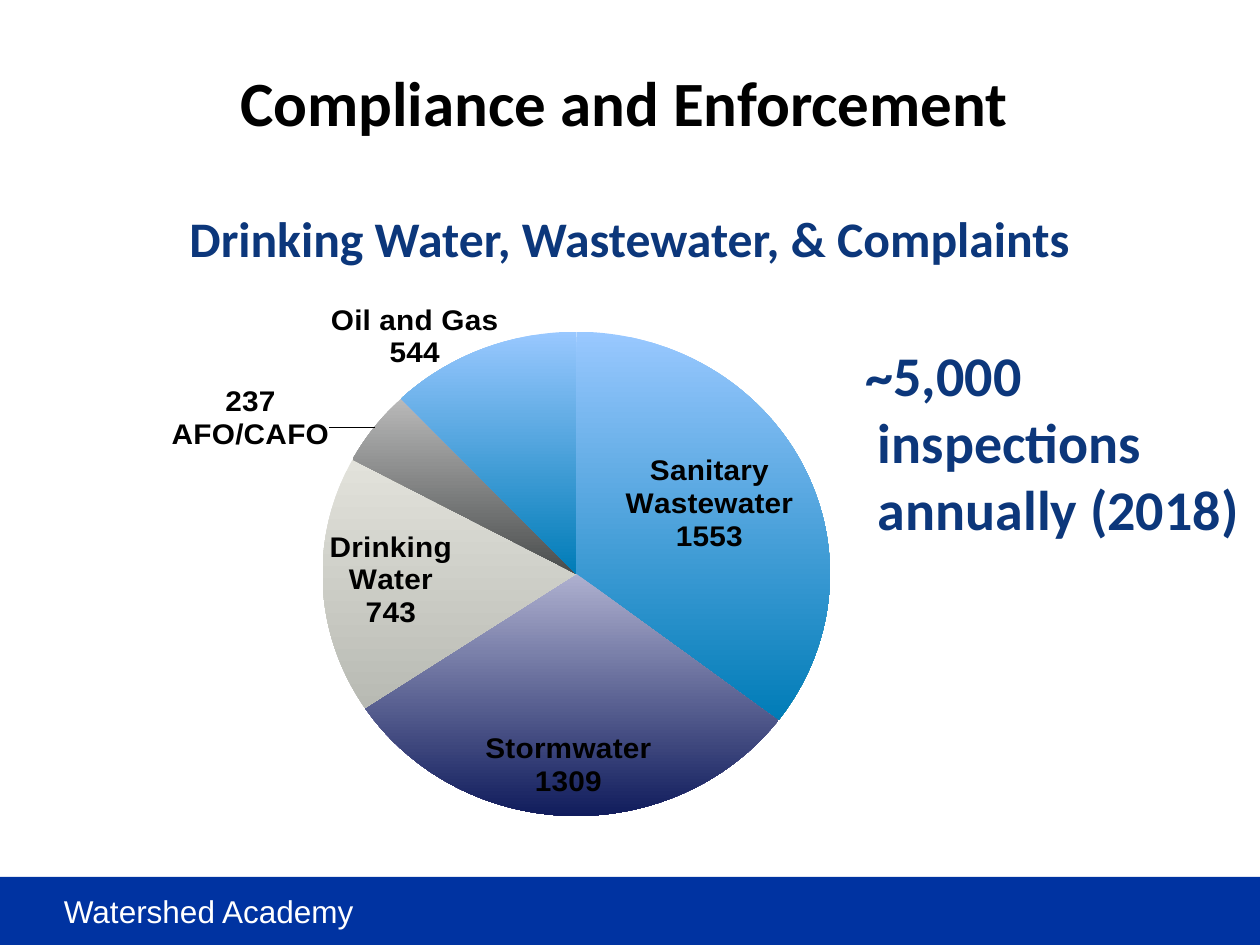
from dataclasses import dataclass

from pptx import Presentation
from pptx.chart.data import CategoryChartData
from pptx.dml.color import RGBColor
from pptx.enum.chart import XL_CHART_TYPE as ChartType, XL_LABEL_POSITION as Position
from pptx.enum.shapes import MSO_SHAPE as Preset
from pptx.enum.text import MSO_ANCHOR as Anchor, PP_ALIGN as Align
from pptx.oxml import parse_xml
from pptx.oxml.ns import nsdecls
from pptx.util import Cm, Pt


@dataclass(frozen=True)
class Theme:
    heading_font: str = "Calibri"
    label_font: str = "Arial"
    black: str = "000000"
    white: str = "FFFFFF"
    navy: str = "0C377B"
    footer: str = "0033A1"
    title_size: float = 36
    callout_size: float = 32
    subtitle_size: float = 28.4
    footer_size: float = 18
    label_size: float = 17


THEME = Theme()

SLICES = [
    (35, "99C8FF", "007CB7", Position.CENTER, (0.02, -0.03),
     ["Sanitary", "Wastewater", "1553"]),
    (30, "AEB0CF", "101C5C", Position.INSIDE_END, (0, -0.02), ["Stormwater", "1309"]),
    (17, "E2E2DB", "B8BAB3", Position.CENTER, (-0.06, 0), ["Drinking", "Water", "743"]),
    (5, "B9B9B9", "4A4D4D", Position.OUTSIDE_END, (-0.04, 0.05), ["237", "AFO/CAFO"]),
    (12, "99C8FF", "007CB7", Position.OUTSIDE_END, (0.02, 0.04), ["Oil and Gas", "544"]),
]


def style_font(font, name, size, color, bold=False):
    font.name = name
    font.size = Pt(size)
    font.bold = bold
    font.color.rgb = RGBColor.from_string(color)


def style_frame(text_frame, name, size, color, bold=False, align=None):
    for paragraph in text_frame.paragraphs:
        if align is not None:
            paragraph.alignment = align
        for run in paragraph.runs:
            style_font(run.font, name, size, color, bold)


def add_text(slide, box, text, *style, **options):
    shape = slide.shapes.add_textbox(*map(Cm, box))
    text_frame = shape.text_frame
    text_frame.word_wrap = True
    text_frame.text = text
    style_frame(text_frame, *style, **options)
    return text_frame


def set_title(slide, text):
    title = slide.shapes.title
    title.left, title.top, title.width, title.height = map(Cm, (1.04, 0.76, 23.09, 2.57))
    title.text_frame.text = text
    title.text_frame.vertical_anchor = Anchor.MIDDLE
    style_frame(title.text_frame, THEME.heading_font, THEME.title_size, THEME.black,
                bold=True, align=Align.CENTER)


def add_footer(slide, text):
    bar = slide.shapes.add_shape(Preset.RECTANGLE, Cm(0), Cm(17.68), Cm(25.4), Cm(1.37))
    bar.shadow.inherit = False
    bar.fill.solid()
    bar.fill.fore_color.rgb = RGBColor.from_string(THEME.footer)
    bar.line.fill.background()
    add_text(slide, (1.04, 17.86, 8.53, 1.04), text,
             THEME.label_font, THEME.footer_size, THEME.white)


def add_callout(slide, lines):
    text_frame = add_text(slide, (16.45, 6.74, 9.3, 5.74), "\n".join(lines),
                          THEME.heading_font, THEME.callout_size, THEME.navy, bold=True)
    for paragraph in text_frame.paragraphs:
        properties = paragraph._p.get_or_add_pPr()
        properties.set("marL", str(Cm(1)))
        properties.set("indent", "0")
    text_frame.paragraphs[0]._p.get_or_add_pPr().set("marL", str(Cm(0.75)))


def make_layout(**values):
    children = "".join(f'<c:{tag} val="{value}"/>' for tag, value in values.items())
    return parse_xml(f'<c:layout {nsdecls("c")}><c:manualLayout>{children}'
                     '</c:manualLayout></c:layout>')


def set_plot_layout(chart, left, top, width, height):
    plot_area = chart._chartSpace.chart.plotArea
    for layout in plot_area.xpath("c:layout"):
        plot_area.remove(layout)
    plot_area.insert(0, make_layout(layoutTarget="inner", xMode="edge", yMode="edge",
                                    x=left, y=top, w=width, h=height))


def format_slice(point, top_color, bottom_color, position, offset, lines):
    fill = point.format.fill
    fill.gradient()
    fill.gradient_angle = 270
    for stop, color in zip(fill.gradient_stops, (top_color, bottom_color)):
        stop.color.rgb = RGBColor.from_string(color)
    point.format.line.fill.background()
    label = point.data_label
    label.text_frame.text = "\n".join(lines)
    style_frame(label.text_frame, THEME.label_font, THEME.label_size, THEME.black, bold=True)
    label.position = position
    label._get_or_add_dLbl().insert(1, make_layout(x=offset[0], y=offset[1]))


def add_inspection_pie(slide):
    data = CategoryChartData()
    data.categories = [str(number) for number in range(1, len(SLICES) + 1)]
    data.add_series("Series 1", [row[0] for row in SLICES])
    chart = slide.shapes.add_chart(ChartType.PIE, Cm(1.37), Cm(5.59), Cm(19.71),
                                   Cm(11.76), data).chart
    chart.has_legend = False
    chart.has_title = False
    style_font(chart.font, THEME.label_font, THEME.label_size, THEME.black, bold=True)
    chart.plots[0].vary_by_categories = True
    set_plot_layout(chart, 0.26, 0.05, 0.52, 0.87)
    points = chart.plots[0].series[0].points
    for index, (_, *appearance) in enumerate(SLICES):
        format_slice(points[index], *appearance)


def main():
    presentation = Presentation()
    presentation.slide_width = Cm(25.4)
    presentation.slide_height = Cm(19.05)
    slide = presentation.slides.add_slide(presentation.slide_layouts[5])
    add_footer(slide, "Watershed Academy")
    add_text(slide, (0, 4.06, 25.4, 2.69), "Drinking Water, Wastewater, & Complaints",
             THEME.heading_font, THEME.subtitle_size, THEME.navy,
             bold=True, align=Align.CENTER)
    add_callout(slide, ["~5,000", "inspections", "annually (2018)"])
    add_inspection_pie(slide)
    set_title(slide, "Compliance and Enforcement")
    presentation.save("out.pptx")


if __name__ == "__main__":
    main()
